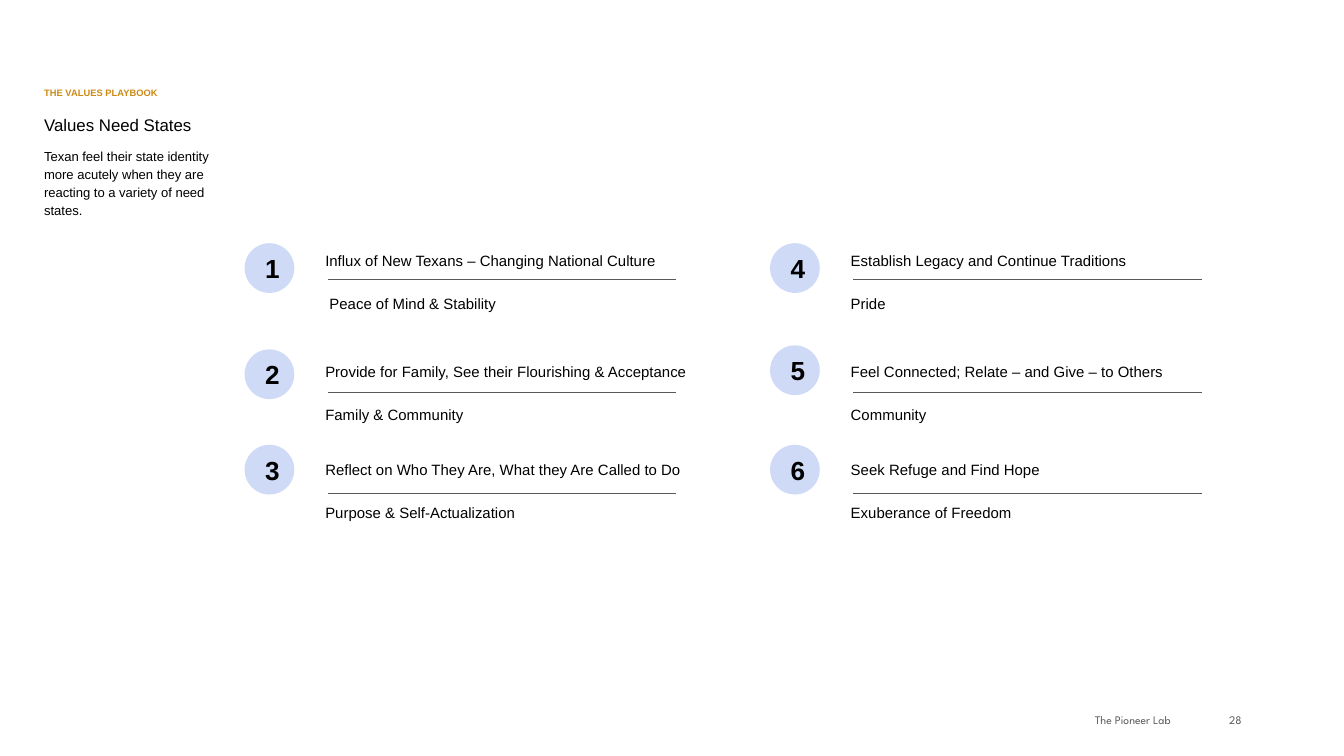
from lxml import etree
from pptx import Presentation
from pptx.dml.color import RGBColor
from pptx.enum.shapes import MSO_CONNECTOR, MSO_SHAPE
from pptx.enum.text import MSO_ANCHOR, MSO_AUTO_SIZE, PP_ALIGN
from pptx.oxml.ns import qn
from pptx.util import Inches, Pt

CENTER, RIGHT = PP_ALIGN.CENTER, PP_ALIGN.RIGHT
TOP, MIDDLE = MSO_ANCHOR.TOP, MSO_ANCHOR.MIDDLE
GROW = MSO_AUTO_SIZE.SHAPE_TO_FIT_TEXT
OVAL, STRAIGHT = MSO_SHAPE.OVAL, MSO_CONNECTOR.STRAIGHT

WIDTH = 10
HEIGHT = WIDTH * 9 / 16
BLACK, GRAY, GOLD, PALE_BLUE = "000000", "595959", "CD8914", "CFDBF6"
INSET = 0.1
INDENT = 0.5
BADGE = 0.37
ITEM_HEIGHT = 0.66
RULE_START, RULE_LENGTH = 0.62, 2.59

COLUMNS = [1.82, 5.73]
ROWS = [1.75, 2.58, 3.31]
RULE_DROPS = [0.33, 0.34, 0.36]
# For each column: trigger, need state, text width, badge drop below the row top
NEED_STATES = [
    [("Influx of New Texans – Changing National Culture",
      " Peace of Mind & Stability", 4.05, 0.06),
     ("Provide for Family, See their Flourishing & Acceptance",
      "Family & Community", 4.05, 0.02),
     ("Reflect on Who They Are, What they Are Called to Do",
      "Purpose & Self-Actualization", 3.49, 0)],
    [("Establish Legacy and Continue Traditions", "Pride", 3.63, 0.06),
     ("Feel Connected; Relate – and Give – to Others", "Community", 3.77, -0.01),
     ("Seek Refuge and Find Hope", "Exuberance of Freedom", 3.49, 0)],
]


def color(hex_code):
    return RGBColor.from_string(hex_code)


def set_insets(frame, left, top, right, bottom):
    frame.margin_left, frame.margin_top = Inches(left), Inches(top)
    frame.margin_right, frame.margin_bottom = Inches(right), Inches(bottom)


def write(para, text, size, hex_code=BLACK, font="Arial", bold=False):
    span = para.add_run()
    span.text = text
    span.font.size = Pt(size)
    span.font.name = font
    span.font.bold = bold
    span.font.color.rgb = color(hex_code)


def add_text_frame(page, box, insets=(INSET,) * 4, anchor=TOP, grow=True):
    frame = page.shapes.add_textbox(*map(Inches, box)).text_frame
    frame.word_wrap = True
    frame.vertical_anchor = anchor
    set_insets(frame, *insets)
    if grow:
        frame.auto_size = GROW
    return frame


def add_badge(page, left, top, number):
    badge = page.shapes.add_shape(OVAL, *map(Inches, (left, top, BADGE, BADGE)))
    badge.shadow.inherit = False
    badge.fill.solid()
    badge.fill.fore_color.rgb = color(PALE_BLUE)
    badge.line.fill.background()
    frame = badge.text_frame
    frame.word_wrap = True
    frame.vertical_anchor = MIDDLE
    set_insets(frame, *(INSET,) * 4)
    para = frame.paragraphs[0]
    para.alignment = CENTER
    write(para, str(number), 14, bold=True)


def add_rule(page, left, top, length):
    rule = page.shapes.add_connector(
        STRAIGHT, *map(Inches, (left, top, left + length, top)))
    rule.line.color.rgb = color(GRAY)
    rule.line.width = Pt(0.75)
    etree.SubElement(rule._element.spPr, qn("a:effectLst"))


def add_need_state(page, box, number, lines, badge_drop, rule_drop):
    left, top = box[:2]
    add_badge(page, left, top + badge_drop, number)
    frame = add_text_frame(page, box, (INSET + INDENT, INSET, INSET, INSET))
    for index, line in enumerate(lines):
        para = frame.add_paragraph() if index else frame.paragraphs[0]
        para.line_spacing = 1.15
        para.space_before = Pt(12)
        write(para, line, 8)
    para.space_after = Pt(12)
    add_rule(page, left + RULE_START, top + rule_drop, RULE_LENGTH)


def add_need_grid(page):
    for column, (left, states) in enumerate(zip(COLUMNS, NEED_STATES)):
        rows = zip(ROWS, RULE_DROPS, states)
        for row, (top, rule_drop, state) in enumerate(rows):
            trigger, need, width, badge_drop = state
            number = column * len(ROWS) + row + 1
            add_need_state(page, (left, top, width, ITEM_HEIGHT), number,
                           (trigger, need), badge_drop, rule_drop)


def add_intro(page, left, top, width):
    """Places the section label, the title and the summary as a stack."""
    label = add_text_frame(page, (left, top, width + 0.16, 0.29))
    write(label.paragraphs[0], "THE VALUES PLAYBOOK", 5, GOLD, bold=True)
    parts = [
        (0.13, 0.35, 9, "Values Need States"),
        (0.38, 0.73, 7, "Texan feel their state identity more acutely when "
                        "they are reacting to a variety of need states."),
    ]
    for drop, height, size, text in parts:
        frame = add_text_frame(page, (left, top + drop, width, height))
        para = frame.paragraphs[0]
        para.line_spacing = 1.15
        para.space_after = Pt(12)
        write(para, text, size)


def add_footer(page, box):
    frame = add_text_frame(page, box, (0.07, 0.04, 0.07, 0.04), MIDDLE, grow=False)
    para = frame.paragraphs[0]
    para.alignment = RIGHT
    write(para, "The Pioneer Lab\t28", 6.2, GRAY, "League Spartan")


def main():
    deck = Presentation()
    deck.slide_width, deck.slide_height = Inches(WIDTH), Inches(HEIGHT)
    page = deck.slides.add_slide(deck.slide_layouts[6])
    add_intro(page, 0.23, 0.61, 1.45)
    add_need_grid(page)
    add_footer(page, (7.06, 5.21, 2.25, 0.3))
    deck.save("out.pptx")


if __name__ == "__main__":
    main()
